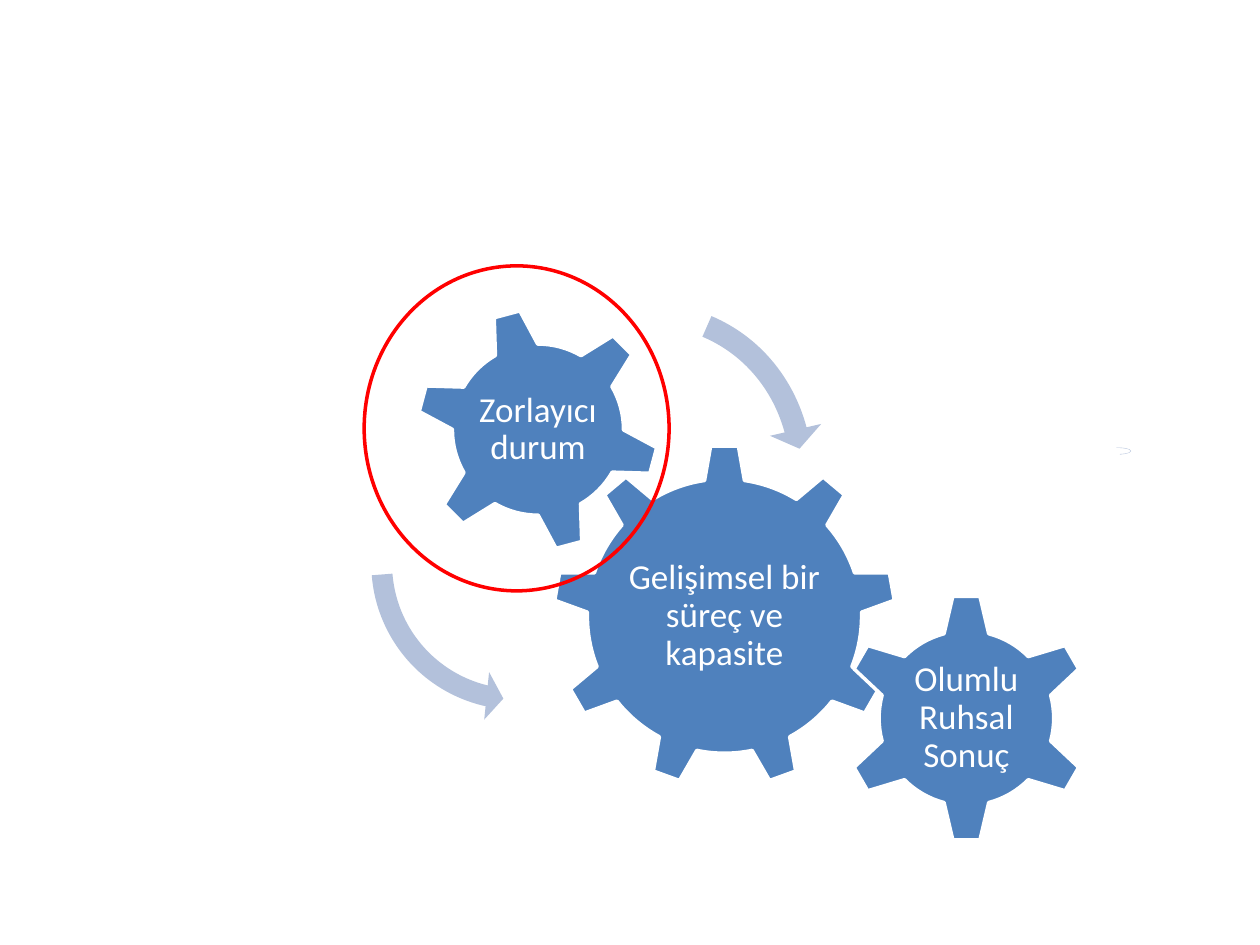
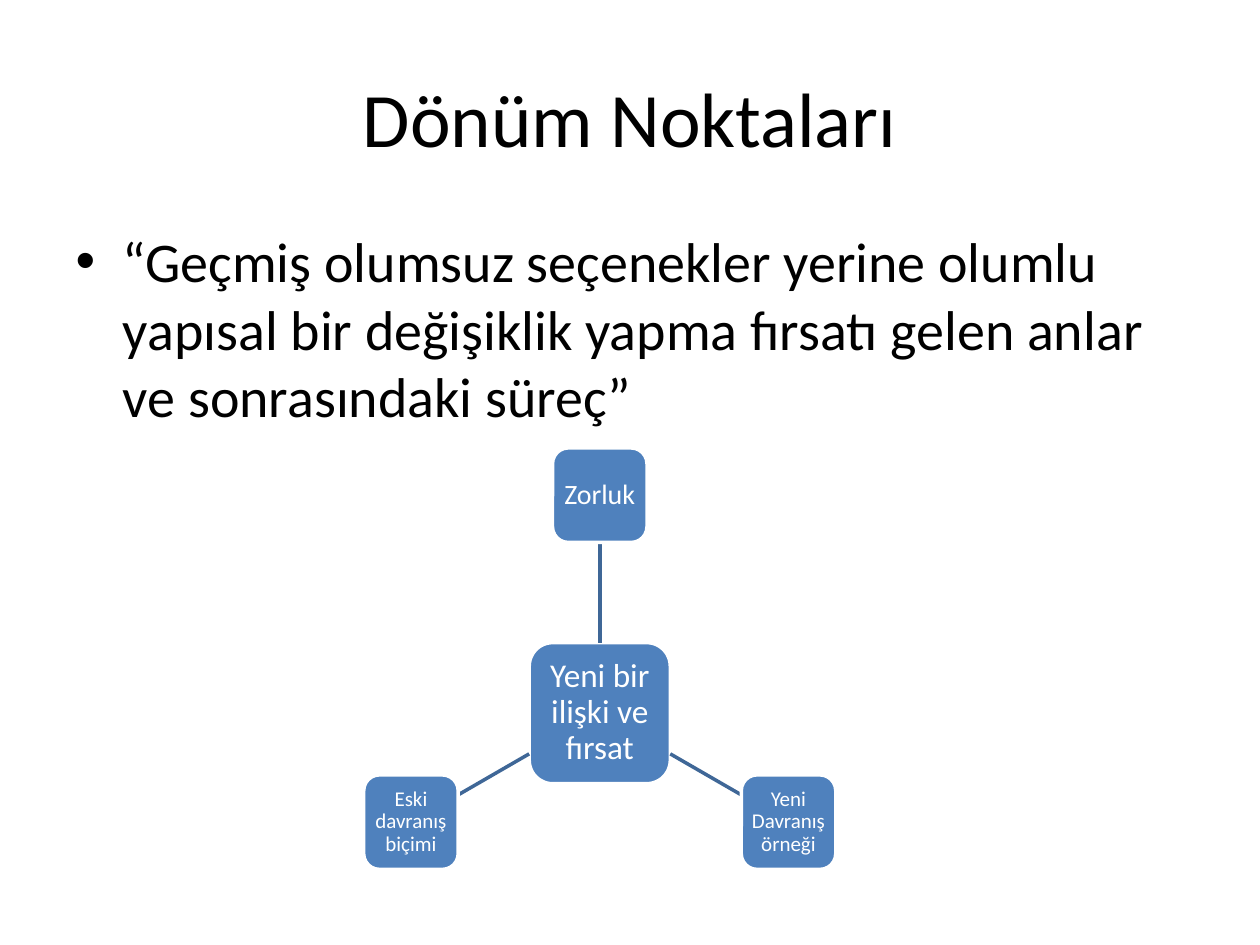
from math import cos, radians, sin

from lxml import etree
from pptx import Presentation
from pptx import util as u
from pptx.dml.color import RGBColor
from pptx.enum import shapes, text
from pptx.oxml.ns import qn

THEME = {
    "font": "Calibri", "title": 44, "body": 32, "gear": 20, "line": 2,
    "ink": "000000", "label": "FFFFFF", "edge": "FFFFFF", "accent": "4F81BD",
    "arrow": "B3C1DB", "spoke": "3F6797", "ring": "FF0000",
}
SHAPE = shapes.MSO_SHAPE

GEARS = [
    {"words": "Gelişimsel bir süreç ve kapasite", "kind": SHAPE.GEAR_9,
     "center": (5.75, 4.89), "size": 2.72, "label": (1.63, 1.44), "turn": 0},
    {"words": "Olumlu Ruhsal Sonuç", "kind": SHAPE.GEAR_6,
     "center": (7.67, 5.7), "size": 1.98, "label": (0.98, 0.98), "turn": 0},
    {"words": "Zorlayıcı durum", "kind": SHAPE.GEAR_6,
     "center": (4.27, 3.41), "size": 1.94, "label": (1.09, 1.09), "turn": 345},
]
ARROWS = [
    {"kind": SHAPE.CIRCULAR_ARROW, "box": (8.75, 3.55, 0.23, 0.06), "turn": 0,
     "bend": (0.05, 2.99, 25.24, 158.45, 0.06)},
    {"kind": SHAPE.LEFT_CIRCULAR_ARROW, "box": (2.84, 3.21, 2.53, 2.53), "turn": 288.2,
     "bend": (0.065, 4.3, 104.89, 148.38, 0.075)},
    {"kind": SHAPE.CIRCULAR_ARROW, "box": (3.46, 2.37, 3.19, 2.98), "turn": 118.5,
     "bend": (0.06, 3.94, 133.14, 105.08, 0.07)},
]
RING = (2.89, 2.11, 2.42, 2.58)

TITLE = "Dönüm Noktaları"
QUOTE = ("“Geçmiş olumsuz seçenekler yerine olumlu yapısal bir değişiklik "
         "yapma fırsatı gelen anlar ve sonrasındaki süreç”")
HUB = {"words": "Yeni bir ilişki ve fırsat", "center": (4.76, 5.66), "size": 1.12, "pt": 19}
NODES = [("Zorluk", -90, 16), ("Yeni Davranış örneği", 30, 12), ("Eski davranış biçimi", 150, 12)]
NODE_SIZE, ORBIT = 0.75, 1.73


def color(name):
    return RGBColor.from_string(THEME[name])


def put(obj, **values):
    for name, value in values.items():
        setattr(obj, name, value)


def inches(values):
    return [u.Inches(v) for v in values]


def centered(center, width, height):
    return center[0] - width / 2, center[1] - height / 2, width, height


def stroke(line, name):
    line.color.rgb = color(name)
    line.width = u.Pt(THEME["line"])


def add_shape(slide, kind, box, fill=None, line=None, turn=0):
    sp = slide.shapes.add_shape(kind, *inches(box))
    sp.shadow.inherit = False
    sp.rotation = turn
    if fill:
        sp.fill.solid()
        sp.fill.fore_color.rgb = color(fill)
    else:
        sp.fill.background()
    if line:
        stroke(sp.line, line)
    else:
        sp.line.fill.background()
    return sp


def write(tf, words, size, ink, **layout):
    p = tf.paragraphs[0]
    put(p, **layout)
    r = p.add_run()
    r.text = words
    put(r.font, name=THEME["font"], size=u.Pt(size))
    r.font.color.rgb = color(ink)


def label(sp, words, size):
    inset = u.Inches(0.03)
    put(sp.text_frame, word_wrap=True, vertical_anchor=text.MSO_ANCHOR.MIDDLE,
        margin_left=inset, margin_right=inset, margin_top=inset, margin_bottom=inset)
    write(sp.text_frame, words, size, "label",
          alignment=text.PP_ALIGN.CENTER, line_spacing=0.9)


def add_node(slide, words, center, size, pt):
    sp = add_shape(slide, SHAPE.ROUNDED_RECTANGLE, centered(center, size, size), "accent", "edge")
    label(sp, words, pt)


def along(center, angle, distance):
    return center[0] + distance * cos(angle), center[1] + distance * sin(angle)


def add_spoke(slide, angle):
    stretch = 2 * max(abs(cos(angle)), abs(sin(angle)))
    start = along(HUB["center"], angle, HUB["size"] / stretch)
    end = along(HUB["center"], angle, ORBIT - NODE_SIZE / stretch)
    line = slide.shapes.add_connector(shapes.MSO_CONNECTOR.STRAIGHT, *inches(start + end))
    stroke(line.line, "spoke")
    etree.SubElement(line._element.spPr, qn("a:effectLst"))


def build_gears(prs):
    slide = prs.slides.add_slide(prs.slide_layouts[6])
    for gear in GEARS:
        box = centered(gear["center"], gear["size"], gear["size"])
        add_shape(slide, gear["kind"], box, "accent", "edge", gear["turn"])
        caption = slide.shapes.add_textbox(*inches(centered(gear["center"], *gear["label"])))
        label(caption, gear["words"], THEME["gear"])
    for arrow in ARROWS:
        sp = add_shape(slide, arrow["kind"], arrow["box"], "arrow", turn=arrow["turn"])
        for i, value in enumerate(arrow["bend"]):
            sp.adjustments[i] = value
    add_shape(slide, SHAPE.FLOWCHART_CONNECTOR, RING, line="ring")


def build_turning_points(prs):
    slide = prs.slides.add_slide(prs.slide_layouts[1])
    title, body = slide.placeholders
    for sp, box in ((title, (0.5, 0.3, 9, 1.25)), (body, (0.5, 1.75, 9, 4.95))):
        put(sp, **dict(zip(("left", "top", "width", "height"), inches(box))))
    write(title.text_frame, TITLE, THEME["title"], "ink", alignment=text.PP_ALIGN.CENTER)
    write(body.text_frame, QUOTE, THEME["body"], "ink")

    add_node(slide, **HUB)
    for words, degrees, pt in NODES:
        angle = radians(degrees)
        add_spoke(slide, angle)
        add_node(slide, words, along(HUB["center"], angle, ORBIT), NODE_SIZE, pt)


def main():
    prs = Presentation()
    put(prs, slide_width=u.Inches(10), slide_height=u.Inches(7.5))
    build_gears(prs)
    build_turning_points(prs)
    prs.save("out.pptx")


if __name__ == "__main__":
    main()
